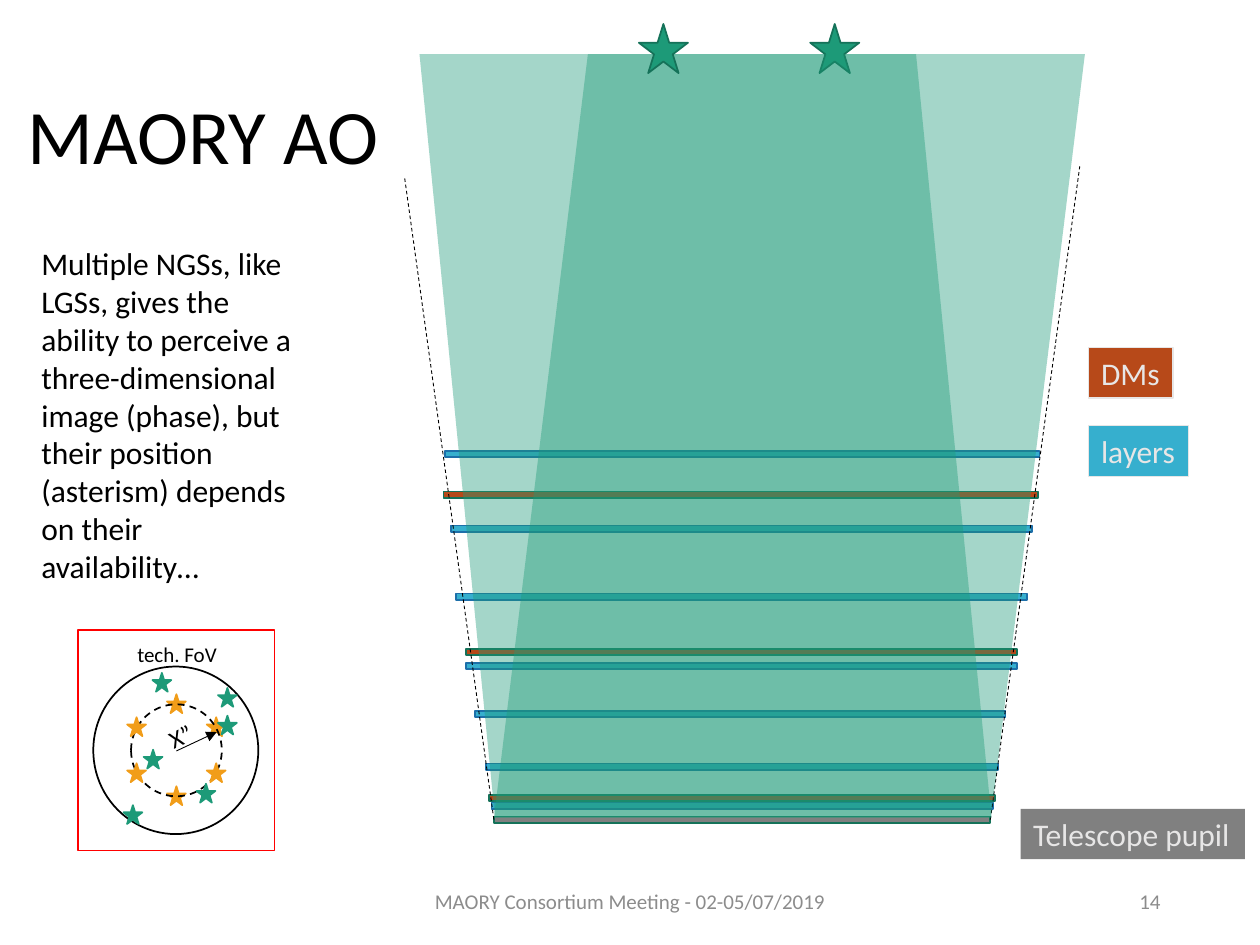
"""Build the MAORY AO slide with its beams, layers and field of view."""
from math import cos, radians, sin

from lxml.etree import SubElement
from pptx import Presentation
from pptx.dml.color import RGBColor
from pptx.enum.dml import MSO_LINE
from pptx.enum.shapes import MSO_CONNECTOR, MSO_SHAPE
from pptx.enum.text import MSO_ANCHOR, MSO_AUTO_SIZE, PP_ALIGN
from pptx.oxml.ns import qn
from pptx.util import Inches, Pt

BLACK = RGBColor(0x00, 0x00, 0x00)
WHITE = RGBColor(0xFF, 0xFF, 0xFF)
RED = RGBColor(0xFF, 0x00, 0x00)
GRAY = RGBColor(0x80, 0x80, 0x80)
MUTED = RGBColor(0x8C, 0x8C, 0x8C)
PALE = RGBColor(0xE7, 0xE6, 0xE6)
CYAN = RGBColor(0x36, 0xAF, 0xCE)
BLUE = RGBColor(0x1D, 0x6F, 0xA9)
RUST = RGBColor(0xB7, 0x49, 0x19)
GREEN = RGBColor(0x1D, 0x9A, 0x78)
PINE = RGBColor(0x15, 0x72, 0x59)
AMBER = RGBColor(0xF1, 0x9D, 0x19)

TITLE = "MAORY AO"
BODY = ("Multiple NGSs, like LGSs, gives the ability to perceive a "
        "three-dimensional image (phase), but their position (asterism) "
        "depends on their availability…")
FOOTER = "MAORY Consortium Meeting - 02-05/07/2019"
NUMBER = "14"

BAR = 0.05
LAYERS = [(3.9, 6.37, 3.98), (3.77, 5.64, 4.21), (3.7, 5.26, 4.37),
          (3.58, 4.17, 4.61), (3.53, 3.58, 4.72), (3.62, 4.71, 4.53),
          (3.86, 6.06, 4.06)]
MIRRORS = [(3.7, 5.15, 4.37), (3.88, 6.31, 4.02), (3.52, 3.9, 4.72)]
PUPIL = (3.92, 6.48, 3.94)
EDGES = [(1, (3.21, 1.4)), (3, (8.57, 1.32))]
LABELS = [("layers", (8.64, 3.38, 0.79, 0.4), CYAN, PALE),
          ("DMs", (8.64, 2.76, 0.67, 0.4), RUST, PALE),
          ("Telescope pupil", (8.1, 6.42, 1.78, 0.4), GRAY, None)]
BEAMS = [((3.92, 0.43, 4.69, 6.06), 0.159, (6.43, 0.19), False),
         ((3.33, 0.43, 4.54, 6.06), 0.132, (5.07, 0.19), True)]
GUIDE = 0.39

CENTER = (1.4, 5.95)
RING = 0.365
STAR = 0.15
UNDER = (-90, 90, -30)
OVER = (150, 30, -150)
NATURAL = [(1.56, 6.22), (1.73, 5.46), (1.21, 5.34), (1.14, 5.95),
           (1.73, 5.68), (0.98, 6.39)]

deck = Presentation()
deck.slide_width, deck.slide_height = Inches(10), Inches(7.5)
slide = deck.slides.add_slide(deck.slide_layouts[6])


def draw(kind, box, fill=None, line=None, width=1, flip=False, alpha=None):
    shape = slide.shapes.add_shape(kind, *map(Inches, box))
    shape.shadow.inherit = False
    if fill is None:
        shape.fill.background()
    else:
        shape.fill.solid()
        shape.fill.fore_color.rgb = fill
    if line is None:
        shape.line.fill.background()
    else:
        shape.line.color.rgb = line
        shape.line.width = Pt(width)
    props = shape._element.spPr
    if flip:
        props.find(qn("a:xfrm")).set("flipH", "1")
    if alpha:
        color = props.find(qn("a:solidFill")).find(qn("a:srgbClr"))
        SubElement(color, qn("a:alpha")).set("val", str(alpha * 1000))
    return shape


def link(start, end, dash=False, arrow=False):
    line = slide.shapes.add_connector(MSO_CONNECTOR.STRAIGHT, *map(Inches, start + end))
    line.line.color.rgb = BLACK
    line.line.width = Pt(0.5)
    if dash:
        line.line.dash_style = MSO_LINE.DASH
    props = line._element.spPr
    if arrow:
        SubElement(props.find(qn("a:ln")), qn("a:tailEnd")).set("type", "triangle")
    SubElement(props, qn("a:effectLst"))
    return line


def write(text, box=None, shape=None, size=18, color=BLACK, align=PP_ALIGN.LEFT,
          anchor=MSO_ANCHOR.TOP, wrap=True, grow=False, space=None, turn=0):
    shape = shape or slide.shapes.add_textbox(*map(Inches, box))
    shape.rotation = turn
    frame = shape.text_frame
    frame.word_wrap = wrap
    frame.auto_size = MSO_AUTO_SIZE.SHAPE_TO_FIT_TEXT if grow else MSO_AUTO_SIZE.NONE
    frame.vertical_anchor = anchor
    para = frame.paragraphs[0]
    para.alignment = align
    if space:
        para.line_spacing = space
    run = para.add_run()
    run.text = text
    run.font.name = "Calibri"
    run.font.size = Pt(size)
    run.font.color.rgb = color


def bar(place, fill, line):
    return draw(MSO_SHAPE.RECTANGLE, (*place, BAR), fill, line)


def star(left, top, color):
    draw(MSO_SHAPE.STAR_5_POINT, (left, top, STAR, STAR), color, color)


def orbit(angles):
    for angle in angles:
        turn = radians(angle)
        star(CENTER[0] + RING * cos(turn) - STAR / 2,
             CENTER[1] + RING * sin(turn) - STAR / 2, AMBER)


def main():
    for place in LAYERS:
        bar(place, CYAN, BLUE)
    for place in MIRRORS:
        bar(place, RUST, PINE)
    pupil = bar(PUPIL, GRAY, PINE)
    for side, end in EDGES:
        link(PUPIL[:2], end, dash=True).begin_connect(pupil, side)
    for text, box, fill, line in LABELS:
        label = draw(MSO_SHAPE.RECTANGLE, box, fill, line, 0.75)
        write(text, shape=label, color=PALE, wrap=False, grow=True)

    middle = MSO_ANCHOR.MIDDLE
    write(TITLE, (0.12, 0.38, 8.62, 1.45), size=44, anchor=middle, space=0.9)
    write(FOOTER, (3.31, 6.95, 3.38, 0.4), size=12, color=MUTED,
          align=PP_ALIGN.CENTER, anchor=middle)
    write(NUMBER, (7.06, 6.95, 2.25, 0.4), size=12, color=MUTED,
          align=PP_ALIGN.RIGHT, anchor=middle)
    write(BODY, (0.23, 1.89, 2.24, 3.13), grow=True)

    for box, slant, place, flip in BEAMS:
        beam = draw(MSO_SHAPE.PARALLELOGRAM, box, GREEN, flip=flip, alpha=40)
        beam.adjustments[0] = slant
        draw(MSO_SHAPE.STAR_5_POINT, (*place, GUIDE, GUIDE), GREEN, PINE, flip=flip)

    draw(MSO_SHAPE.RECTANGLE, (0.62, 5, 1.56, 1.75), WHITE, RED)
    write("tech. FoV", (0.9, 5.04, 1.01, 0.3), size=12, align=PP_ALIGN.CENTER, grow=True)
    orbit(UNDER)
    draw(MSO_SHAPE.OVAL, (0.74, 5.29, 1.31, 1.33), line=BLACK)
    ring = draw(MSO_SHAPE.OVAL, (1.04, 5.59, 0.72, 0.73), line=BLACK)
    ring.line.dash_style = MSO_LINE.DASH
    write("X”", (1.24, 5.66, 0.44, 0.34), size=14, grow=True, turn=335.4)
    link((1.4, 5.96), (1.72, 5.81), arrow=True)
    orbit(OVER)
    for place in NATURAL:
        star(*place, GREEN)
    deck.save("out.pptx")


if __name__ == "__main__":
    main()
